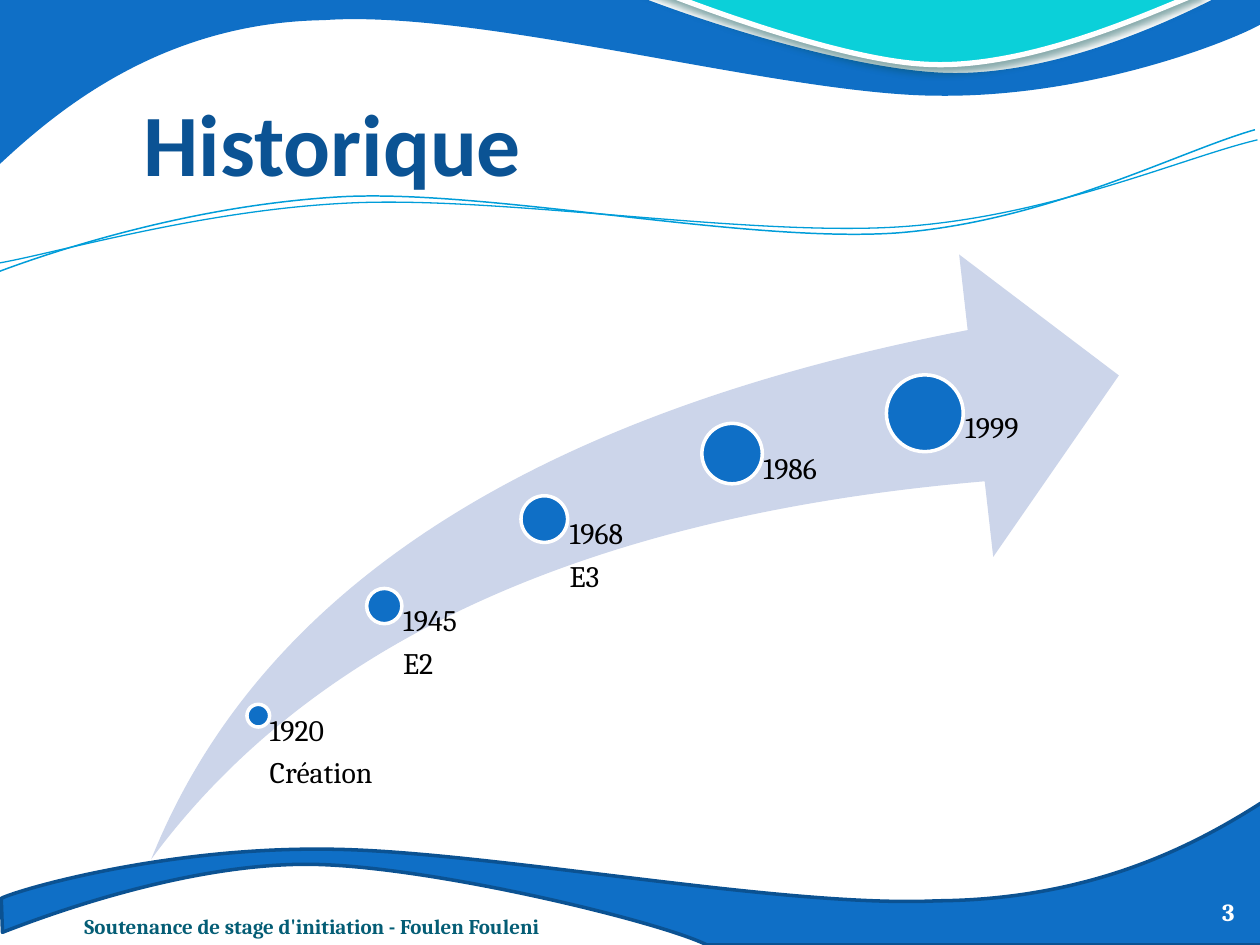
from typing import NamedTuple, Optional

from lxml import etree
from pptx import Presentation
from pptx import util as u
from pptx.dml.color import RGBColor
from pptx.enum import shapes, text
from pptx.oxml.ns import qn

PX = 9144  # 100 px to the inch
BLUE = RGBColor(0x0F, 0x6F, 0xC6)
NAVY = RGBColor(0x0B, 0x52, 0x92)
TITLE = RGBColor(0x0B, 0x53, 0x94)
CYAN = RGBColor(0x0B, 0xD0, 0xD9)
SKY = RGBColor(0x00, 0x9D, 0xD9)
PALE = RGBColor(0xCC, 0xD5, 0xEA)
TEAL = RGBColor(0x04, 0x5D, 0x75)
WHITE = RGBColor(0xFF, 0xFF, 0xFF)
BLACK = RGBColor(0, 0, 0)
FLOOR = 682  # lower edge of the arrow and its labels


class Wave(NamedTuple):
    start: tuple
    bends: list  # one point is a line, three points are a curve
    fill: Optional[RGBColor] = None
    line: Optional[RGBColor] = None
    width: float = 0
    glow: bool = False


class Stop(NamedTuple):
    x: int
    y: int
    size: int
    inset: int
    width: int
    lines: list


WAVES = [
    # Bottom band
    Wave((1002, 750), [
        [(561, 750)],
        [(526, 732), (338, 686), (243, 686)],
        [(149, 686), (43, 724), (2, 740)],
        [(1, 713)],
        [(18, 705), (132, 673), (256, 674)],
        [(380, 674), (620, 721), (744, 715)],
        [(873, 714), (956, 666), (1003, 636)],
        [(1002, 750)]], BLUE, NAVY, 2),
    # Top band
    Wave((0, -34), [
        [(440, -34)],
        [(475, -9), (663, 58), (758, 58)],
        [(853, 58), (958, 4), (1000, -21)],
        [(1001, 19)],
        [(983, 30), (870, 77), (746, 76)],
        [(622, 76), (382, 7), (257, 16)],
        [(129, 18), (46, 87), (-1, 131)],
        [(0, -34)]], BLUE),
    # Top accent
    Wave((461, -34), [
        [(489, -19), (652, 47), (734, 51)],
        [(816, 56), (917, 8), (953, -6)],
        [(953, -34)],
        [(461, -34)]], CYAN, WHITE, 3, True),
    # Thin lines under the title
    Wave((-2, 216), [
        [(46, 198), (156, 162), (275, 156)],
        [(393, 151), (591, 193), (711, 185)],
        [(831, 176), (936, 120), (996, 103)]], None, SKY, 0.85),
    Wave((-2, 209), [
        [(45, 201), (162, 166), (281, 161)],
        [(401, 156), (595, 188), (715, 180)],
        [(834, 172), (939, 125), (998, 111)]], None, SKY, 0.75),
]

STOPS = [
    Stop(205, 568, 18, 9, 101, ["1920", "Création"]),
    Stop(305, 481, 28, 15, 127, ["1945", "E2"]),
    Stop(432, 412, 37, 20, 148, ["1968", "E3"]),
    Stop(581, 360, 48, 25, 154, ["1986"]),
    Stop(734, 328, 61, 32, 154, ["1999"]),
]


def paint(shape, fill=None, line=None, width: float = 0) -> None:
    shape.shadow.inherit = False
    if fill is None:
        shape.fill.background()
    else:
        shape.fill.solid()
        shape.fill.fore_color.rgb = fill
    if line is None:
        shape.line.fill.background()
    else:
        shape.line.color.rgb = line
        shape.line.width = u.Pt(width)


def add_glow(shape) -> None:
    box = shape._element.spPr.find(qn("a:effectLst"))
    cast = etree.SubElement(box, qn("a:outerShdw"), blurRad=str(u.Pt(4.5)),
                            dist=str(u.Pt(3)), dir="5400000", rotWithShape="0")
    tint = etree.SubElement(cast, qn("a:srgbClr"), val="024B4E")
    etree.SubElement(tint, qn("a:alpha"), val="48000")


def add_wave(slide, wave: Wave) -> None:
    pen = slide.shapes.build_freeform(*wave.start, scale=PX)
    pen.add_line_segments([p for bend in wave.bends for p in bend],
                          close=wave.fill is not None)
    shape = pen.convert_to_shape()
    # Join each run of three control points into one curve
    steps = iter(list(shape._element.iter(qn("a:lnTo"))))
    for bend in wave.bends:
        first = next(steps)
        if len(bend) == 3:
            first.tag = qn("a:cubicBezTo")
            for _ in range(2):
                step = next(steps)
                first.append(step[0])
                step.getparent().remove(step)
    paint(shape, wave.fill, wave.line, wave.width)
    if wave.glow:
        add_glow(shape)


def write(shape, lines: list, font: dict, para: Optional[dict] = None,
          inset: tuple = (0, 0, 0, 0), anchor=text.MSO_ANCHOR.BOTTOM) -> None:
    frame = shape.text_frame
    frame.text = "\n".join(lines)
    sides = ("left", "top", "right", "bottom")
    form = {f"margin_{s}": n * PX for s, n in zip(sides, inset)}
    form |= {"word_wrap": True, "vertical_anchor": anchor,
             "auto_size": text.MSO_AUTO_SIZE.NONE}
    for key, val in form.items():
        setattr(frame, key, val)
    for par in frame.paragraphs:
        for key, val in (para or {}).items():
            setattr(par, key, val)
        for key, val in font.items():
            if key == "color":
                par.font.color.rgb = val
            else:
                setattr(par.font, key, val)


def add_text(slide, area: tuple, *args, **form) -> None:
    write(slide.shapes.add_textbox(*(n * PX for n in area)), *args, **form)


def add_stop(slide, stop: Stop) -> None:
    half = stop.size / 2
    area = (stop.x - half, stop.y - half, stop.size, stop.size)
    dot = slide.shapes.add_shape(shapes.MSO_SHAPE.OVAL,
                                 *(int(n * PX) for n in area))
    paint(dot, BLUE, WHITE, 2)
    add_text(slide, (stop.x, stop.y, stop.width, FLOOR - stop.y), stop.lines,
             {"name": "Cambria", "size": u.Pt(17), "color": BLACK},
             {"line_spacing": 0.9, "space_after": u.Pt(6)},
             inset=(stop.inset, 0, 0, 0), anchor=text.MSO_ANCHOR.TOP)


def main() -> None:
    deck = Presentation()
    deck.slide_width, deck.slide_height = 1000 * PX, 750 * PX
    slide = deck.slides.add_slide(deck.slide_layouts[5])

    # Background waves
    for wave in WAVES:
        add_wave(slide, wave)

    # Title, in front of the waves
    title = slide.shapes.title
    slide.shapes._spTree.append(title._element)
    spot = {"left": 114, "top": 53, "width": 874, "height": 101}
    for key, val in spot.items():
        setattr(title, key, val * PX)
    write(title, ["Historique"],
          {"name": "Calibri", "size": u.Pt(50), "color": TITLE, "bold": True},
          {"alignment": text.PP_ALIGN.LEFT}, inset=(0, 5, 0, 0))

    # Rising arrow with its dates
    arrow = slide.shapes.add_shape(
        shapes.MSO_SHAPE.SWOOSH_ARROW,
        *(n * PX for n in (120, 202, 768, FLOOR - 202)))
    arrow.adjustments[0] = arrow.adjustments[1] = 0.25
    paint(arrow, PALE)
    for stop in STOPS:
        add_stop(slide, stop)

    # Footer and page number
    bold = {"name": "Cambria", "bold": True}
    add_text(slide, (67, 706, 421, 39),
             ["Soutenance de stage d'initiation - Foulen Fouleni"],
             bold | {"size": u.Pt(12), "color": TEAL})
    add_text(slide, (897, 695, 83, 40), ["3"],
             bold | {"size": u.Pt(14), "color": WHITE},
             {"alignment": text.PP_ALIGN.RIGHT})

    deck.save("out.pptx")


if __name__ == "__main__":
    main()
